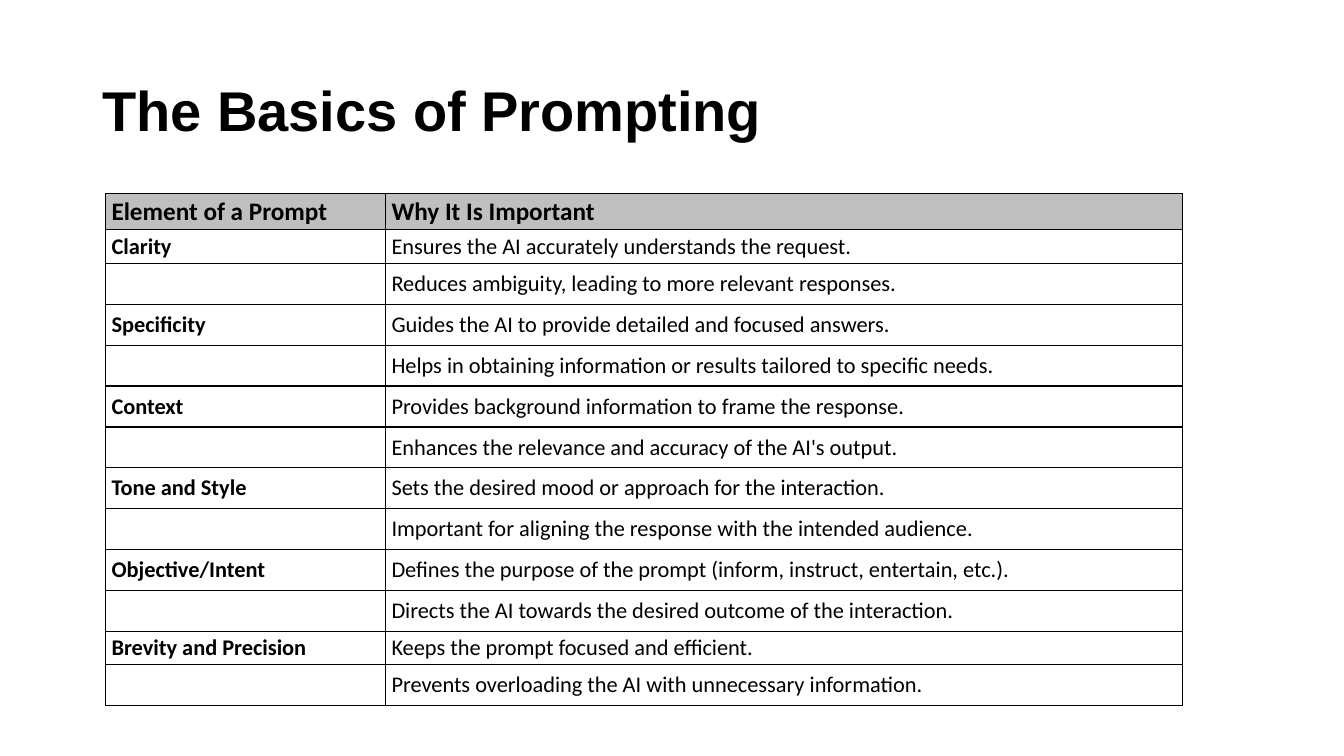
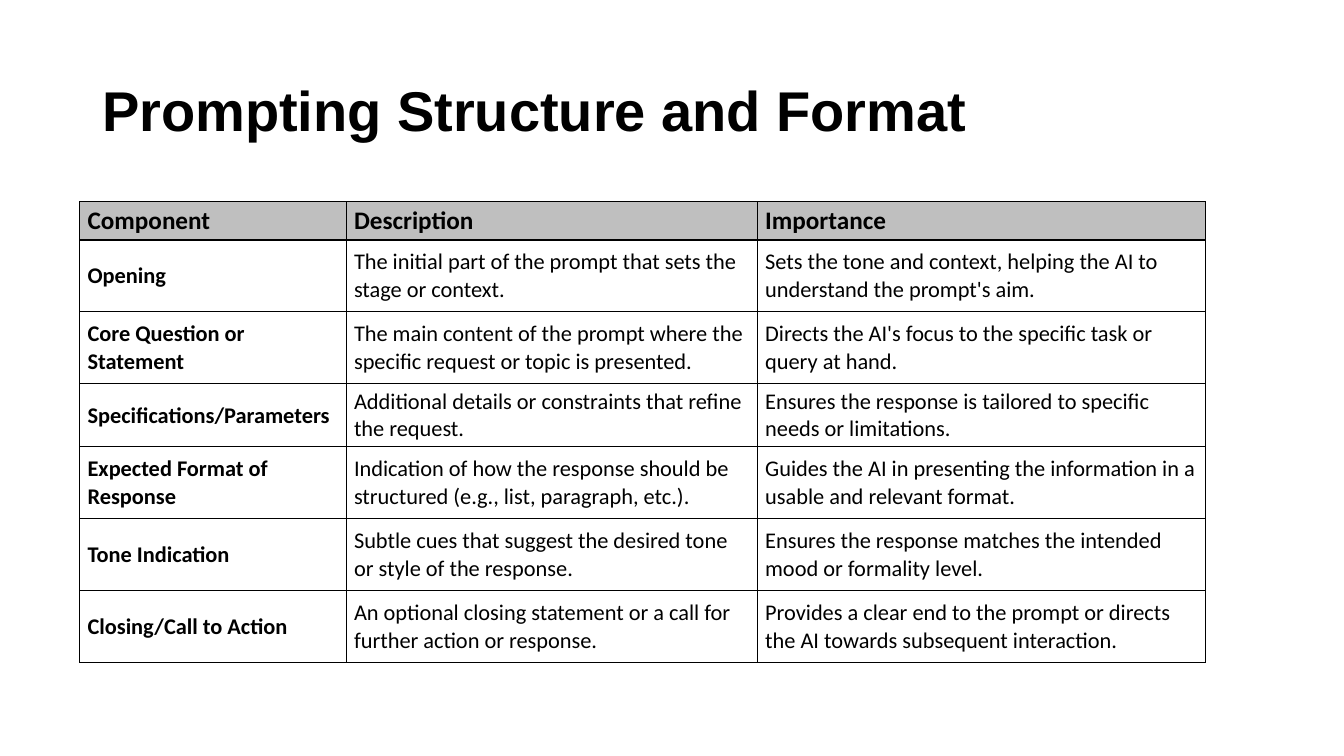
"""Build two slides that explain prompting with titled tables."""
from dataclasses import dataclass

from lxml import etree
from pptx import Presentation
from pptx import util as u
from pptx.dml import color
from pptx.enum import text
from pptx.oxml import ns


@dataclass(frozen=True)
class Theme:
    ink: color.RGBColor = color.RGBColor(0, 0, 0)
    paper: color.RGBColor = color.RGBColor(255, 255, 255)
    header: color.RGBColor = color.RGBColor(0xBF, 0xBF, 0xBF)
    title_font: str = "Arial"
    table_font: str = "Calibri"
    title_size: int = 40
    header_size: int = 18
    body_size: int = 16
    border: int = 1


class Deck:
    def __init__(self, theme):
        self.theme = theme
        self.presentation = Presentation()
        self.presentation.slide_width = u.Pt(960)
        self.presentation.slide_height = u.Pt(540)
        self.slide = None

    def add_slide(self, title):
        layout = self.presentation.slide_layouts[6]
        self.slide = self.presentation.slides.add_slide(layout)
        shape = self.slide.shapes.add_textbox(u.Pt(66), u.Pt(28.8), u.Pt(828), u.Pt(104.4))
        frame = shape.text_frame
        frame.word_wrap = True
        frame.vertical_anchor = text.MSO_ANCHOR.MIDDLE
        paragraph = frame.paragraphs[0]
        paragraph.line_spacing = 0.9
        self.add_run(paragraph, title, self.theme.title_font, self.theme.title_size, True)

    def add_run(self, paragraph, words, font, size, bold):
        run = paragraph.add_run()
        run.text = words
        run.font.name = font
        run.font.size = u.Pt(size)
        run.font.bold = bold
        run.font.color.rgb = self.theme.ink

    def add_table(self, left, top, widths, heights, rows, margins):
        table = self.slide.shapes.add_table(
            len(rows), len(widths), u.Pt(left), u.Pt(top),
            u.Pt(sum(widths)), u.Pt(sum(heights))).table
        table.first_row = False
        table.horz_banding = False
        for column, width in zip(table.columns, widths):
            column.width = u.Pt(width)
        for row, height in zip(table.rows, heights):
            row.height = u.Pt(height)
        for row_index, row in enumerate(rows):
            for column_index, words in enumerate(row):
                cell = table.cell(row_index, column_index)
                self.style_cell(cell, row_index == 0, margins)
                if words:
                    self.fill_cell(cell, words, row_index == 0, column_index == 0)

    def style_cell(self, cell, is_header, margins):
        horizontal, vertical = margins
        cell.margin_left = cell.margin_right = u.Pt(horizontal)
        cell.margin_top = cell.margin_bottom = u.Pt(vertical)
        anchors = text.MSO_ANCHOR
        cell.vertical_anchor = anchors.BOTTOM if is_header else anchors.MIDDLE
        self.add_borders(cell)
        cell.fill.solid()
        cell.fill.fore_color.rgb = self.theme.header if is_header else self.theme.paper

    def add_borders(self, cell):
        properties = cell._tc.get_or_add_tcPr()
        for side in ("lnL", "lnR", "lnT", "lnB"):
            line = etree.SubElement(properties, ns.qn(f"a:{side}"), w=str(u.Pt(self.theme.border)))
            fill = etree.SubElement(line, ns.qn("a:solidFill"))
            etree.SubElement(fill, ns.qn("a:srgbClr"), val=str(self.theme.ink))

    def fill_cell(self, cell, words, is_header, is_label):
        size = self.theme.header_size if is_header else self.theme.body_size
        self.add_run(cell.text_frame.paragraphs[0], words, self.theme.table_font,
                     size, is_header or is_label)

    def save(self):
        self.presentation.save("out.pptx")


BASICS = [
    ("Element of a Prompt", "Why It Is Important"),
    ("Clarity", "Ensures the AI accurately understands the request."),
    ("", "Reduces ambiguity, leading to more relevant responses."),
    ("Specificity", "Guides the AI to provide detailed and focused answers."),
    ("", "Helps in obtaining information or results tailored to specific needs."),
    ("Context", "Provides background information to frame the response."),
    ("", "Enhances the relevance and accuracy of the AI's output."),
    ("Tone and Style", "Sets the desired mood or approach for the interaction."),
    ("", "Important for aligning the response with the intended audience."),
    ("Objective/Intent", "Defines the purpose of the prompt (inform, instruct, entertain, etc.)."),
    ("", "Directs the AI towards the desired outcome of the interaction."),
    ("Brevity and Precision", "Keeps the prompt focused and efficient."),
    ("", "Prevents overloading the AI with unnecessary information."),
]

STRUCTURE = [
    ("Component", "Description", "Importance"),
    ("Opening",
     "The initial part of the prompt that sets the stage or context.",
     "Sets the tone and context, helping the AI to understand the prompt's aim."),
    ("Core Question or Statement",
     "The main content of the prompt where the specific request or topic is presented.",
     "Directs the AI's focus to the specific task or query at hand."),
    ("Specifications/Parameters",
     "Additional details or constraints that refine the request.",
     "Ensures the response is tailored to specific needs or limitations."),
    ("Expected Format of Response",
     "Indication of how the response should be structured (e.g., list, paragraph, etc.).",
     "Guides the AI in presenting the information in a usable and relevant format."),
    ("Tone Indication",
     "Subtle cues that suggest the desired tone or style of the response.",
     "Ensures the response matches the intended mood or formality level."),
    ("Closing/Call to Action",
     "An optional closing statement or a call for further action or response.",
     "Provides a clear end to the prompt or directs the AI towards subsequent interaction."),
]


def main():
    deck = Deck(Theme())
    deck.add_slide("The Basics of Prompting")
    deck.add_table(75.5, 138.2, [200, 569], [26, 24] + [29.2] * 9 + [24, 29.2],
                   BASICS, (4.2, 2.1))
    deck.add_slide("Prompting Structure and Format")
    deck.add_table(57, 144, [190.3, 293.7, 320], [27.4] + [51.4] * 2 + [45] + [51.4] * 3,
                   STRUCTURE, (5.6, 2.8))
    deck.save()


if __name__ == "__main__":
    main()
